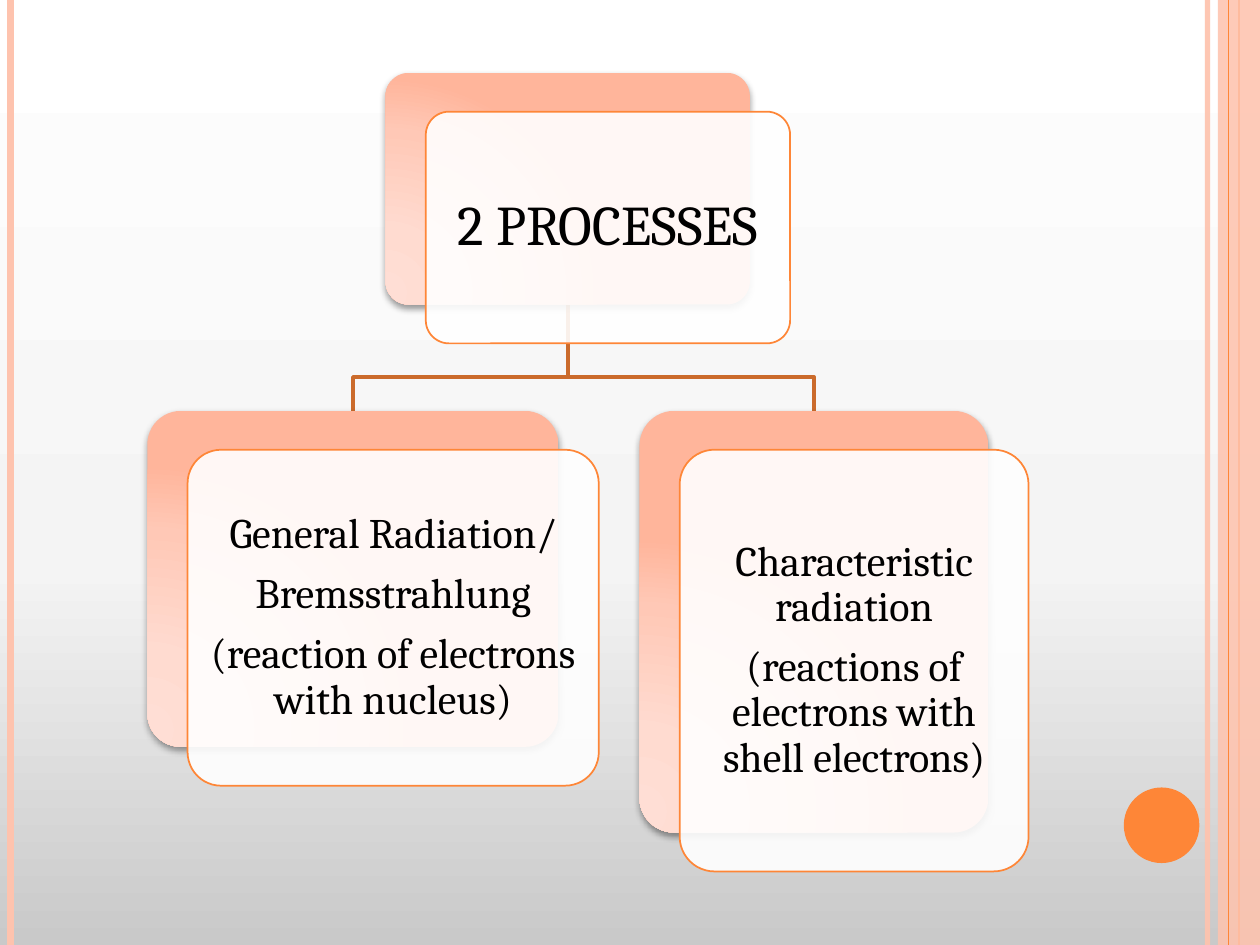
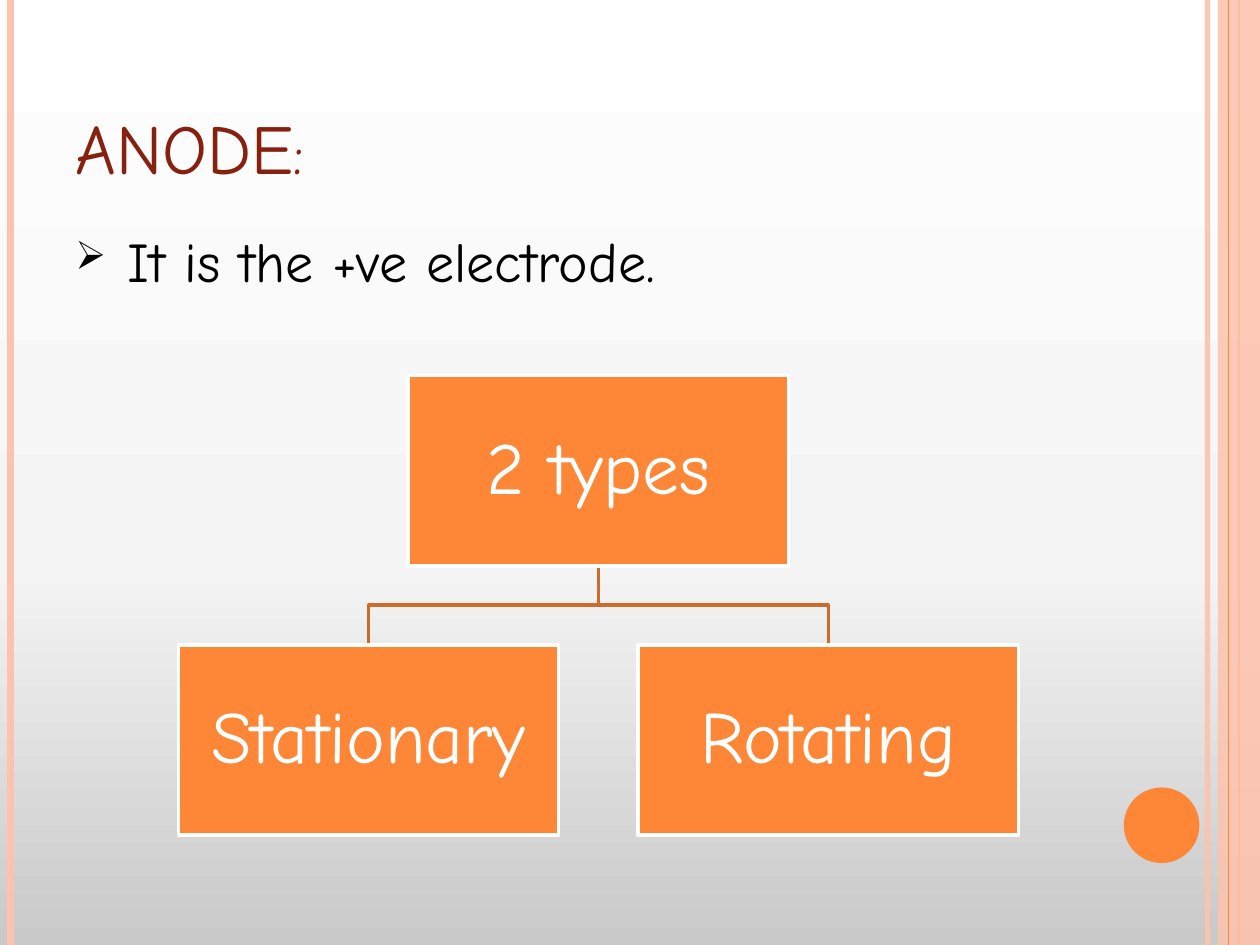
from lxml.etree import SubElement
from pptx import Presentation
from pptx.dml.color import RGBColor
from pptx.enum.shapes import MSO_CONNECTOR, MSO_SHAPE
from pptx.enum.text import MSO_ANCHOR, PP_ALIGN
from pptx.oxml.ns import qn
from pptx.util import Pt

COLORS = {
    "black": "000000", "white": "FFFFFF", "orange": "FE8637",
    "pink": "FEC3AE", "rust": "CB6B2C", "maroon": "862110",
}
GREY_STOPS = [(0, "C9C9C9"), (40, "F4F4F4"), (100, "FFFFFF")]
PEACH_STOPS = [(0, "FFDED5"), (30, "FFDBD0"), (75, "FFC8B6"), (100, "FFB59B")]
SERIF, COMIC = "Cambria", "Comic Neue"
WIDTH, HEIGHT = 720, 540
TITLE_ONLY, BLANK = 5, 6


class SlideBuilder:
    """Hold the deck style and the current page, and draw each kind of element."""

    def __init__(self):
        self.deck = Presentation()
        self.deck.slide_width, self.deck.slide_height = Pt(WIDTH), Pt(HEIGHT)
        self.page = None

    def color(self, name):
        return RGBColor.from_string(COLORS[name])

    def add_page(self, layout):
        self.page = self.deck.slides.add_slide(self.deck.slide_layouts[layout])
        self.page.background.fill.gradient()
        gradient = self.set_stops(self.page._element, GREY_STOPS)
        SubElement(gradient, qn("a:lin"), ang="16200000", scaled="0")
        self.rule(690, "pink", 3, alpha=93)
        self.rule(6, "pink", 4.5)
        self.rule(708, "orange", 1.5)
        self.shape(MSO_SHAPE.RECTANGLE, (696, 0, 24, HEIGHT), "pink", alpha=87)
        self.rule(702, "orange", 0.75)
        self.shape(MSO_SHAPE.OVAL, (642.2, 450, 43.2, 43.2), "orange")

    def set_stops(self, element, stops):
        gradient = element.find(".//" + qn("a:gradFill"))
        for child in list(gradient):
            gradient.remove(child)
        stop_list = SubElement(gradient, qn("a:gsLst"))
        for position, value in stops:
            stop = SubElement(stop_list, qn("a:gs"), pos=str(position * 1000))
            SubElement(stop, qn("a:srgbClr"), val=value)
        return gradient

    def set_alpha(self, shape, alpha):
        tint = shape._element.spPr.find(".//" + qn("a:srgbClr"))
        SubElement(tint, qn("a:alpha"), val=str(alpha * 1000))

    def rule(self, x, color, weight, alpha=100):
        line = self.page.shapes.add_connector(
            MSO_CONNECTOR.STRAIGHT, Pt(x), Pt(0), Pt(x), Pt(HEIGHT))
        line.line.color.rgb = self.color(color)
        line.line.width = Pt(weight)
        SubElement(line._element.spPr, qn("a:effectLst"))
        if alpha < 100:
            self.set_alpha(line, alpha)

    def shape(self, kind, box, fill=None, line=None, weight=1, alpha=100):
        shape = self.page.shapes.add_shape(kind, *map(Pt, box))
        shape.shadow.inherit = False
        if kind == MSO_SHAPE.ROUNDED_RECTANGLE:
            shape.adjustments[0] = 0.1
        if fill:
            shape.fill.solid()
            shape.fill.fore_color.rgb = self.color(fill)
        if alpha < 100:
            self.set_alpha(shape, alpha)
        if line:
            shape.line.color.rgb = self.color(line)
            shape.line.width = Pt(weight)
        else:
            shape.line.fill.background()
        return shape

    def style(self, para, size, font, color):
        para.font.size, para.font.name = Pt(size), font
        para.font.color.rgb = self.color(color)

    def label(self, shape, lines, size, font, color, inset):
        frame = shape.text_frame
        frame.word_wrap = True
        frame.vertical_anchor = MSO_ANCHOR.MIDDLE
        frame.margin_left = frame.margin_right = Pt(inset)
        frame.margin_top = frame.margin_bottom = Pt(inset)
        frame.text = "\n".join(lines)
        for para in frame.paragraphs:
            para.alignment = PP_ALIGN.CENTER
            para.line_spacing = 0.9
            para.space_after = Pt(0.35 * size)
            self.style(para, size, font, color)

    def links(self, root, children, rise):
        left, top, width, height = root
        start_x, start_y = left + width / 2, top + height
        for left, top, width, height in children:
            end_x = left + width / 2
            corners = [(start_x, top - rise), (end_x, top - rise), (end_x, top)]
            outline = self.page.shapes.build_freeform(Pt(start_x), Pt(start_y))
            outline.add_line_segments([(Pt(x), Pt(y)) for x, y in corners], close=False)
            link = outline.convert_to_shape()
            link.shadow.inherit = False
            link.fill.background()
            link.line.color.rgb = self.color("rust")
            link.line.width = Pt(2)

    def card(self, box, lines, size, inset):
        back = self.shape(MSO_SHAPE.ROUNDED_RECTANGLE, box)
        back.fill.gradient()
        gradient = self.set_stops(back._element, PEACH_STOPS)
        focus = SubElement(gradient, qn("a:path"), path="circle")
        SubElement(focus, qn("a:fillToRect"), l="5000", t="100000", r="120000", b="10000")
        effects = back._element.spPr.find(qn("a:effectLst"))
        shadow = SubElement(
            effects, qn("a:outerShdw"), blurRad=str(Pt(4)), dist=str(Pt(2)),
            dir="5400000", rotWithShape="0")
        tint = SubElement(shadow, qn("a:srgbClr"), val=COLORS["black"])
        SubElement(tint, qn("a:alpha"), val="40000")
        left, top, width, height = box
        front = self.shape(MSO_SHAPE.ROUNDED_RECTANGLE, (left + 23, top + 22.2, width, height),
                           "white", "orange", alpha=90)
        self.label(front, lines, size, SERIF, "black", inset)

    def block(self, box, text):
        block = self.shape(MSO_SHAPE.RECTANGLE, box, "orange", "white", 2)
        self.label(block, [text], 42, COMIC, "white", 2)

    def title(self, text):
        title = self.page.shapes.title
        title.left, title.top, title.width, title.height = map(Pt, (36, 21.6, 588, 90))
        title.text_frame.text = text
        title.text_frame.vertical_anchor = MSO_ANCHOR.BOTTOM
        para = title.text_frame.paragraphs[0]
        para.alignment = PP_ALIGN.LEFT
        self.style(para, 40, COMIC, "maroon")
        para._p.pPr.find(qn("a:defRPr")).set("cap", "small")

    def bullet(self, box, text):
        frame = self.page.shapes.add_textbox(*map(Pt, box)).text_frame
        frame.word_wrap = True
        para = frame.paragraphs[0]
        para.text = text
        para.space_before = Pt(6)
        properties = para._p.get_or_add_pPr()
        properties.set("marL", str(Pt(30)))
        properties.set("indent", str(-Pt(30)))
        tint = SubElement(properties, qn("a:buClr"))
        SubElement(tint, qn("a:srgbClr"), val=COLORS["black"])
        SubElement(properties, qn("a:buSzPct"), val="70000")
        SubElement(properties, qn("a:buChar"), char="➢")
        self.style(para, 32, COMIC, "black")


def build_processes(builder):
    builder.add_page(BLANK)
    root = (220.3, 41.6, 208.2, 132.4)
    general = (84.2, 234.8, 235, 192)
    characteristic = (365.4, 234.8, 199.4, 241)
    builder.links(root, [general, characteristic], 19.4)
    builder.card(root, ["2 PROCESSES"], 32, 9.4)
    builder.card(general, ["General Radiation/", "Bremsstrahlung",
                           "(reaction of electrons with nucleus)"], 24, 7.2)
    builder.card(characteristic, ["Characteristic radiation",
                                  "(reactions of electrons with shell electrons)"], 24, 7.2)


def build_anode(builder):
    builder.add_page(TITLE_ONLY)
    builder.title("ANODE:")
    builder.bullet((36, 126, 588, 384), "It is the +ve electrode.")
    width, height, pitch = 217.4, 108.7, 262.8
    left, child_top = 233.3, 368.6
    root = (left, 214.6, width, height)
    children = [(left + side * pitch / 2, child_top, width, height) for side in (-1, 1)]
    builder.links(root, children, 22.7)
    for box, text in zip([root, *children], ["2 types", "Stationary", "Rotating"]):
        builder.block(box, text)


def main():
    builder = SlideBuilder()
    build_processes(builder)
    build_anode(builder)
    builder.deck.save("out.pptx")


if __name__ == "__main__":
    main()
